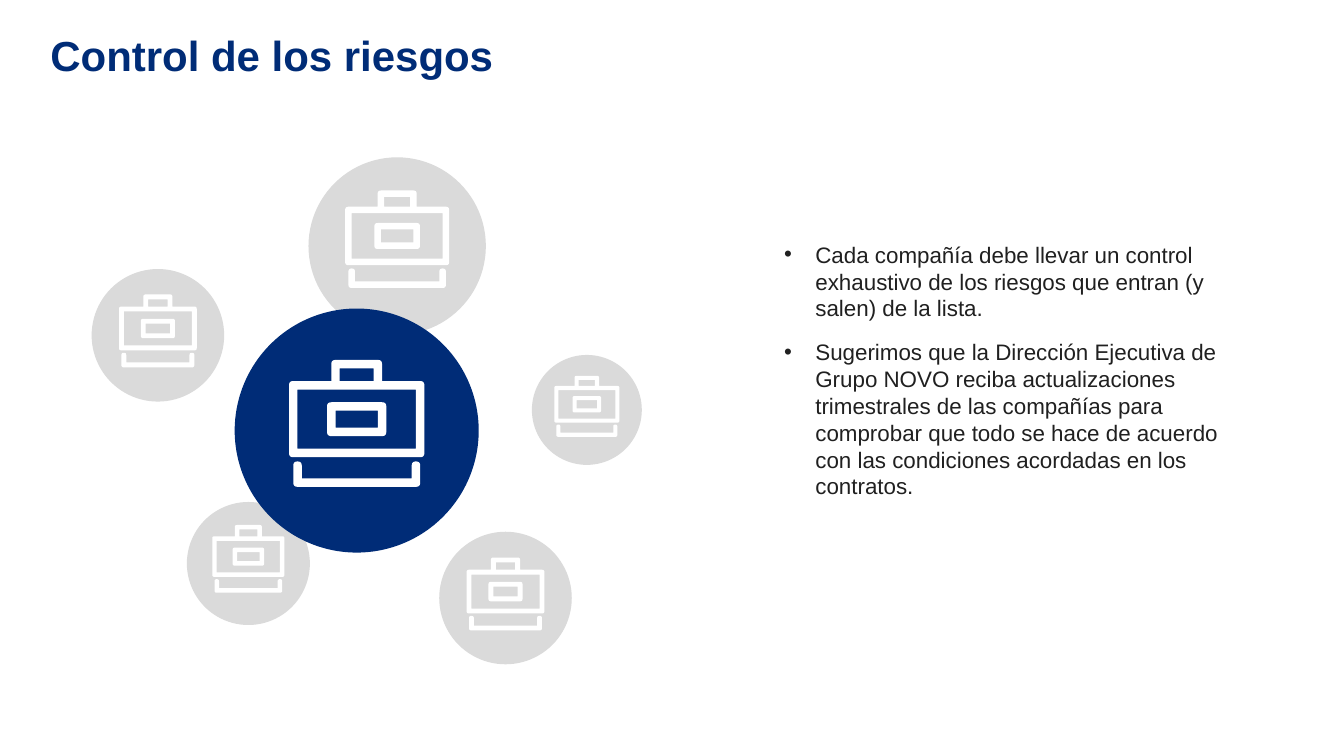
from lxml import etree
from pptx import Presentation, util as u
from pptx.dml.color import RGBColor
from pptx.enum import shapes, text
from pptx.oxml.ns import qn

NAVY = RGBColor(0x00, 0x2C, 0x77)
GREY = RGBColor(0xDA, 0xDA, 0xDA)
INK = RGBColor(0x20, 0x20, 0x20)
WHITE = RGBColor(0xFF, 0xFF, 0xFF)

TITLE = "Control de los riesgos"
POINTS = [
    "Cada compañía debe llevar un control exhaustivo de los riesgos que entran "
    "(y salen) de la lista.",
    "Sugerimos que la Dirección Ejecutiva de Grupo NOVO reciba actualizaciones "
    "trimestrales de las compañías para comprobar que todo se hace de acuerdo "
    "con las condiciones acordadas en los contratos.",
]

BADGES = [
    (6.26, 14.2, 3.1, 13.23, 1.82, GREY),
    (10.01, 6.2, 4.47, 4.8, 2.62, GREY),
    (8.99, 10.85, 6.15, 9.07, 3.41, NAVY),
    (3.98, 8.45, 3.34, 7.42, 1.96, GREY),
    (12.74, 15.07, 3.34, 14.05, 1.96, GREY),
    (14.79, 10.33, 2.77, 9.47, 1.64, GREY),
]


def box(left, top, right, bottom, radius=0):
    return [(left, top, radius), (right, top, radius),
            (right, bottom, radius), (left, bottom, radius)]


CASE_WIDTH = 32
BODY = [(0, 5, 1), (10, 5, 0), (10, 0, 1), (22, 0, 1),
        (22, 5, 0), (32, 5, 1), (32, 23, 1), (0, 23, 1)]
TRAY = [(1, 24, 1), (3, 24, 1), (3, 28, 0), (29, 28, 0),
        (29, 24, 1), (31, 24, 1), (31, 30, 1), (1, 30, 1)]
BRIEFCASE = [
    [BODY, box(12, 2, 20, 5), box(2, 7, 30, 21)],
    [TRAY],
    [box(9, 10, 23, 18, 1), box(11, 12, 21, 16)],
]


def rounded(corners, steps=6):
    """Return the outline points, with each corner rounded by its radius."""
    points = []
    for index, (x, y, radius) in enumerate(corners):
        if not radius:
            points.append((x, y))
            continue
        ends = []
        for other in (corners[index - 1], corners[(index + 1) % len(corners)]):
            length = abs(other[0] - x) + abs(other[1] - y)
            ends.append((x + (other[0] - x) * radius / length,
                         y + (other[1] - y) * radius / length))
        (x0, y0), (x1, y1) = ends
        for step in range(steps + 1):
            t = step / steps
            a, b, c = (1 - t) ** 2, 2 * t * (1 - t), t * t
            points.append((a * x0 + b * x + c * x1, a * y0 + b * y + c * y1))
    return points


def write(paragraph, content, size=16, color=INK, bold=False, bullet=None,
          indent=0, after=0, line=1.0):
    paragraph.line_spacing = line
    paragraph.space_after = u.Pt(after)
    if bullet:
        properties = paragraph._p.get_or_add_pPr()
        properties.set("marL", str(u.Cm(indent)))
        properties.set("indent", str(-u.Cm(indent)))
        font = etree.SubElement(properties, qn("a:buFont"))
        font.set("typeface", "Arial")
        etree.SubElement(properties, qn("a:buChar")).set("char", bullet)
    run = paragraph.add_run()
    run.text = content
    run.font.name = "Arial"
    run.font.size = u.Pt(size)
    run.font.bold = bold
    run.font.color.rgb = color


class RiskSlide:
    def __init__(self, presentation):
        self.slide = presentation.slides.add_slide(presentation.slide_layouts[6])

    def paint(self, shape, color):
        shape.shadow.inherit = False
        shape.fill.solid()
        shape.fill.fore_color.rgb = color
        shape.line.fill.background()

    def text(self, left, top, width, height, contents, **style):
        shape = self.slide.shapes.add_textbox(
            u.Cm(left), u.Cm(top), u.Cm(width), u.Cm(height))
        frame = shape.text_frame
        frame.word_wrap = True
        frame.vertical_anchor = text.MSO_ANCHOR.TOP
        frame.margin_left = frame.margin_right = 0
        frame.margin_top = frame.margin_bottom = 0
        for index, content in enumerate(contents):
            paragraph = frame.add_paragraph() if index else frame.paragraphs[0]
            write(paragraph, content, **style)

    def circle(self, center_x, center_y, diameter, color):
        shape = self.slide.shapes.add_shape(
            shapes.MSO_SHAPE.OVAL, u.Cm(center_x - diameter / 2),
            u.Cm(center_y - diameter / 2), u.Cm(diameter), u.Cm(diameter))
        self.paint(shape, color)

    def briefcase(self, center_x, top, width):
        unit = width / CASE_WIDTH
        left = center_x - width / 2
        for part in BRIEFCASE:
            builder = None
            for corners in part:
                points = [(u.Cm(left + x * unit), u.Cm(top + y * unit))
                          for x, y in rounded(corners)]
                if builder is None:
                    builder = self.slide.shapes.build_freeform(*points[0])
                else:
                    builder.move_to(*points[0])
                builder.add_line_segments(points[1:], close=True)
            self.paint(builder.convert_to_shape(), WHITE)


def main():
    presentation = Presentation()
    presentation.slide_width = u.Cm(33.87)
    presentation.slide_height = u.Cm(19.05)
    slide = RiskSlide(presentation)
    slide.text(1.27, 0.99, 31.27, 1.37, [TITLE],
               size=30, color=NAVY, bold=True, line=0.8)
    slide.text(19.76, 6.07, 10.97, 6.58, POINTS,
               bullet="•", indent=0.79, after=12)
    for center_x, center_y, diameter, _, _, color in BADGES:
        slide.circle(center_x, center_y, diameter, color)
    for center_x, _, _, top, width, _ in BADGES:
        slide.briefcase(center_x, top, width)
    presentation.save("out.pptx")


if __name__ == "__main__":
    main()
